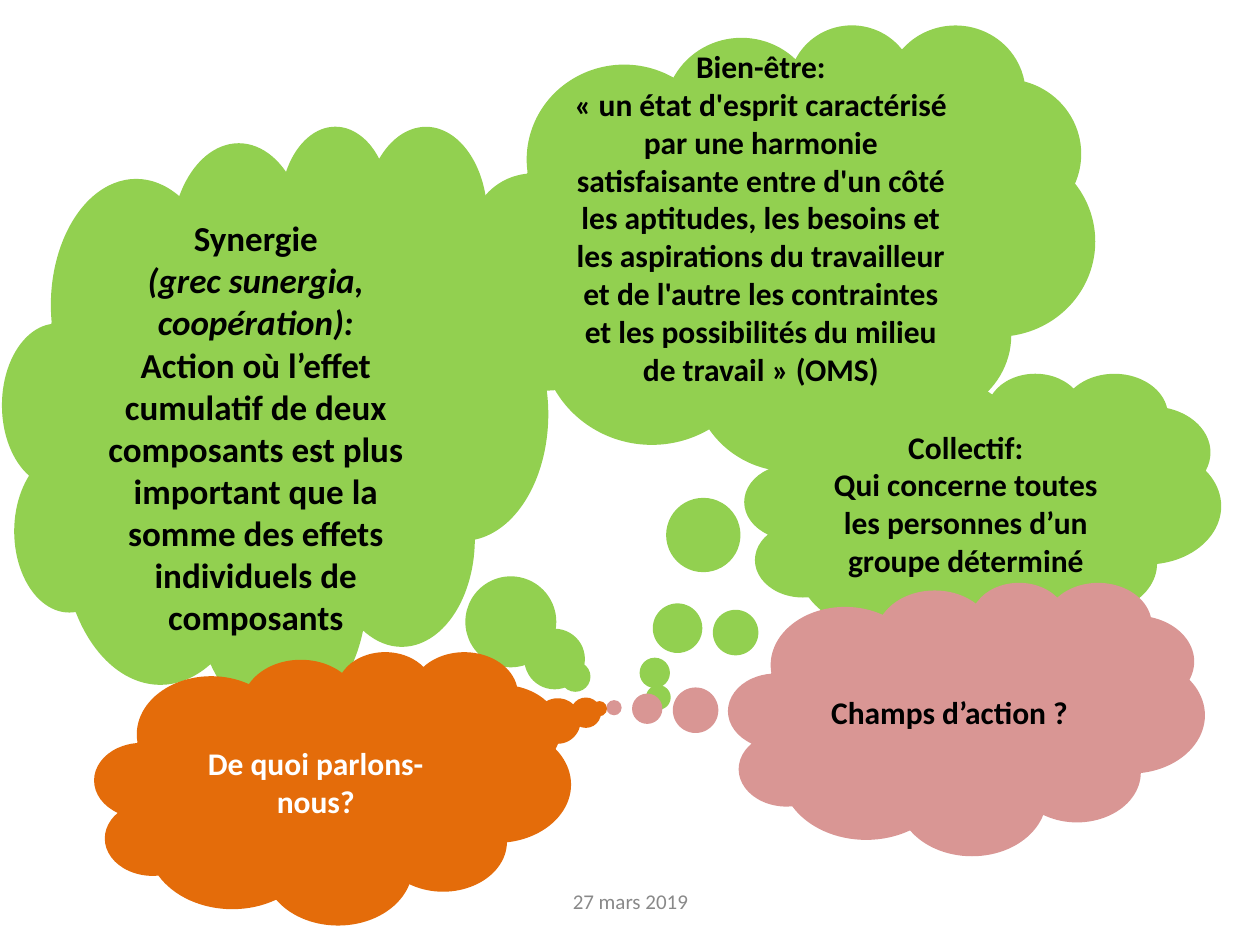
from pptx import Presentation
from pptx.dml.color import RGBColor
from pptx.enum.shapes import MSO_SHAPE as SHAPE
from pptx.enum.text import MSO_ANCHOR as ANCHOR, PP_ALIGN as ALIGN
from pptx.util import Pt

COLORS = {
    "green": "92D050",
    "pink": "D99694",
    "orange": "E46C0A",
    "black": "000000",
    "white": "FFFFFF",
    "grey": "898989",
}
SMALL_CLOUD = (272.2, 156.2)
BLANK_LINE = 22
INSET = 3.6


def rgb(name):
    return RGBColor.from_string(COLORS[name])


def write_text(tf, lines, color, **formats):
    tf.word_wrap = True
    tf.vertical_anchor = ANCHOR.MIDDLE
    for i, line in enumerate(lines):
        text, extra = line if isinstance(line, tuple) else (line, {})
        p = tf.paragraphs[0] if i == 0 else tf.add_paragraph()
        p.alignment = ALIGN.CENTER
        r = p.add_run()
        r.text = text
        r.font.color.rgb = rgb(color)
        for name, value in {"name": "Calibri", **formats, **extra}.items():
            setattr(r.font, name, value)


def add_cloud(s, pos, size, tail, fill, lines, color="black", points=18,
              top=INSET, bottom=INSET):
    sp = s.shapes.add_shape(SHAPE.CLOUD_CALLOUT, *map(Pt, pos + size))
    sp.shadow.inherit = False
    sp.fill.solid()
    sp.fill.fore_color.rgb = rgb(fill)
    sp.line.fill.background()
    for i, value in enumerate(tail):
        sp.adjustments[i] = value
    tf = sp.text_frame
    tf.margin_top, tf.margin_bottom = Pt(top), Pt(bottom)
    write_text(tf, lines, color, size=Pt(points), bold=True)


def add_date(s, text):
    sp = s.shapes.add_textbox(Pt(246.2), Pt(500.4), Pt(228.2), Pt(28.8))
    write_text(sp.text_frame, [text], "grey", size=Pt(12))


def main():
    prs = Presentation()
    prs.slide_width, prs.slide_height = Pt(720), Pt(540)
    s = prs.slides.add_slide(prs.slide_layouts[6])
    italic = {"italic": True}

    add_date(s, "27 mars 2019")
    add_cloud(s, (269.3, 13.7), (356.4, 254.9), (-0.2, 1.01), "green", [
        "Bien-être:",
        "« un état d'esprit caractérisé par une harmonie satisfaisante entre "
        "d'un côté les aptitudes, les besoins et les aspirations du "
        "travailleur et de l'autre les contraintes et les possibilités du "
        "milieu de travail » (OMS)",
    ], bottom=INSET + BLANK_LINE)
    add_cloud(s, (1.4, 71.3), (311.8, 339.1), (0.55, 0.43), "green", [
        "Synergie",
        ("(grec sunergia,", italic),
        ("coopération):", italic),
        "Action où l’effet cumulatif de deux composants est plus important "
        "que la somme des effets individuels de composants",
    ], points=20, top=INSET + BLANK_LINE)
    add_cloud(s, (425.5, 213.1), SMALL_CLOUD, (-0.83, 0.72), "green", [
        "Collectif:",
        "Qui concerne toutes les personnes d’un groupe déterminé",
    ])
    add_cloud(s, (416.2, 332.6), SMALL_CLOUD, (-0.74, -0.04), "pink",
              ["Champs d’action ?"])
    add_cloud(s, (54, 372.2), SMALL_CLOUD, (0.56, -0.29), "orange",
              ["De quoi parlons-nous?"], color="white")
    prs.save("out.pptx")


if __name__ == "__main__":
    main()
